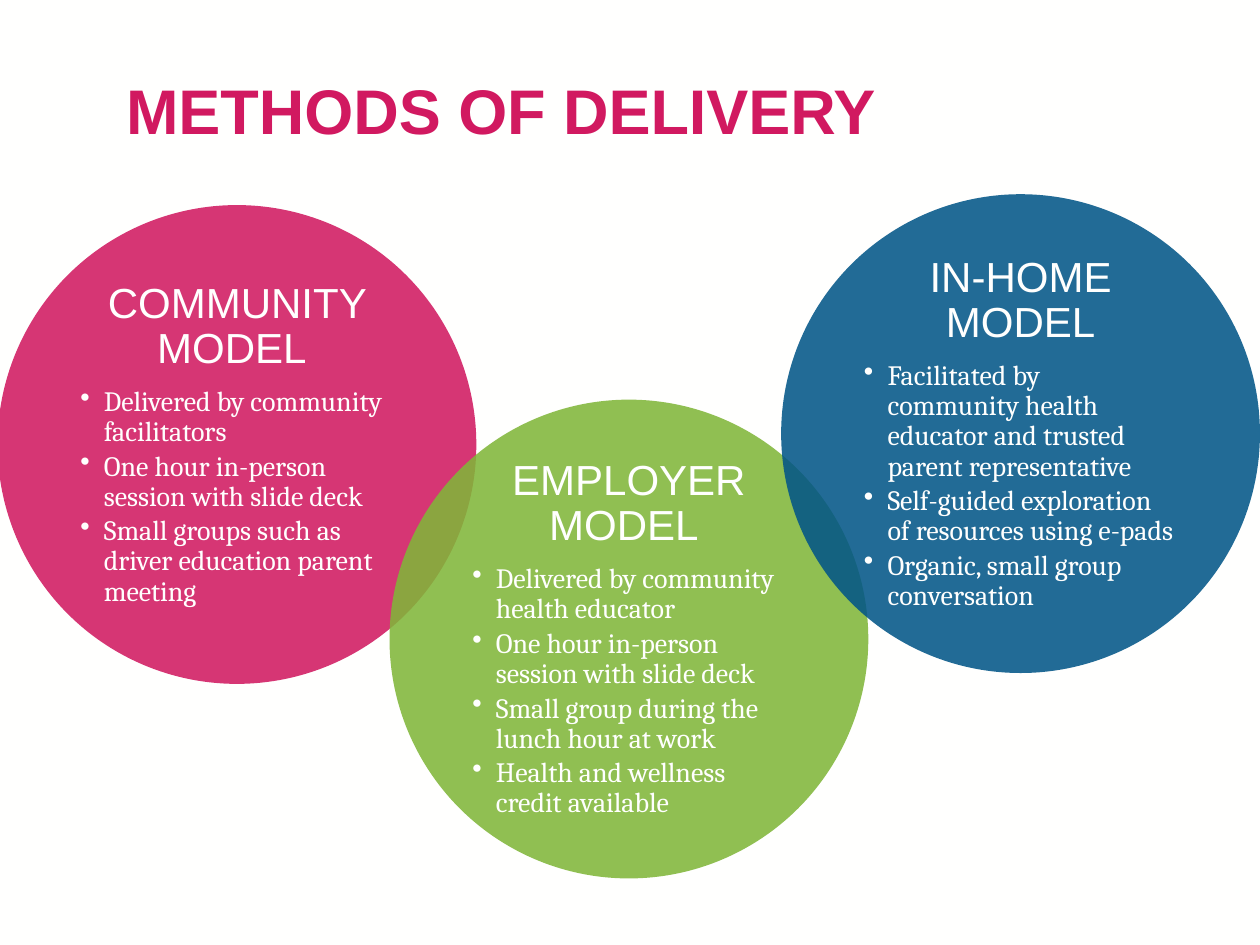
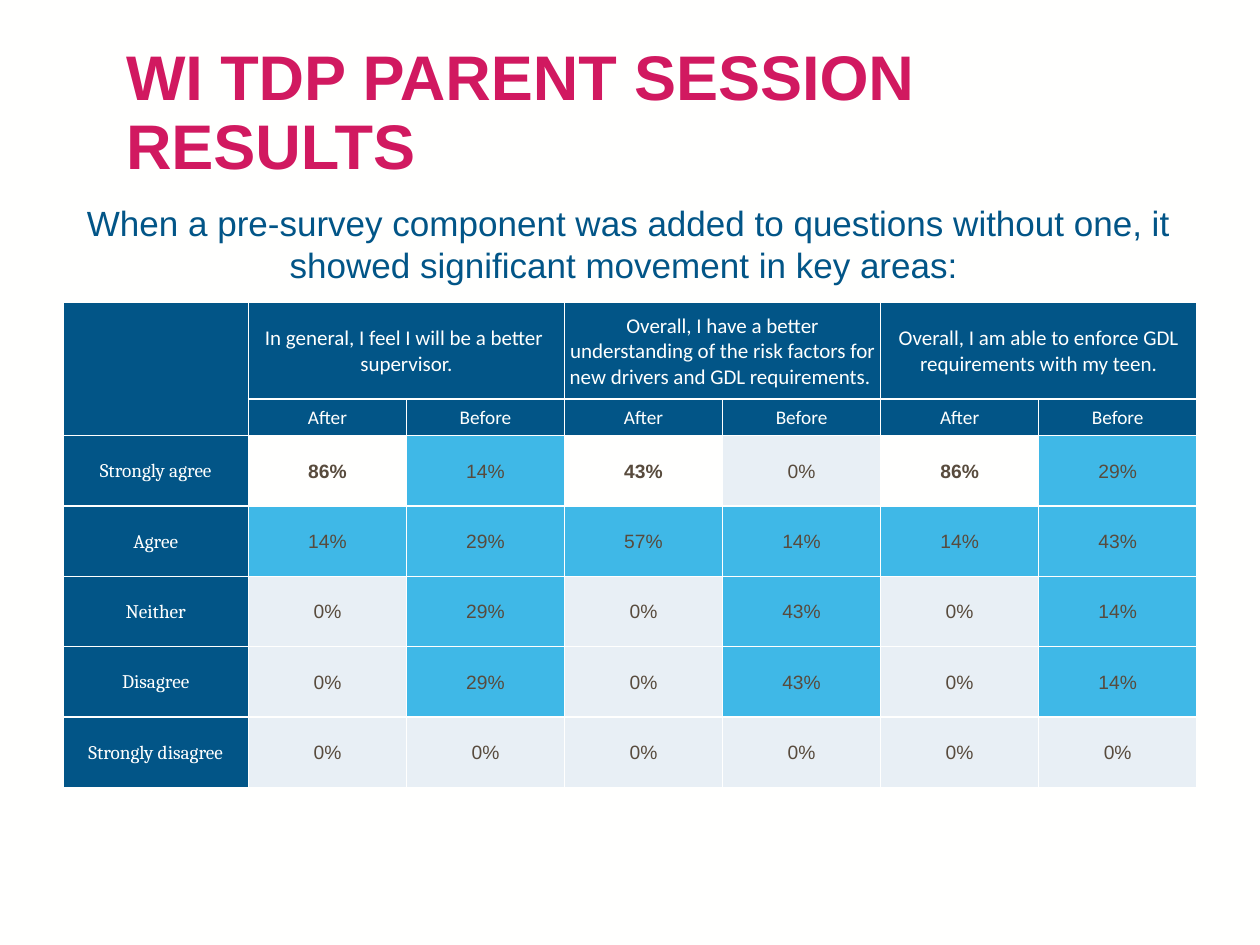
from dataclasses import dataclass

from lxml.etree import SubElement
from pptx import Presentation
from pptx.dml.color import RGBColor
from pptx.enum.shapes import MSO_SHAPE
from pptx.enum.text import MSO_ANCHOR, MSO_AUTO_SIZE, PP_ALIGN
from pptx.oxml import parse_xml
from pptx.oxml.ns import nsdecls, qn
from pptx.util import Pt

HEX = {
    "paper": "FFFFFE",
    "pink": "D11960",
    "green": "80B639",
    "navy": "025587",
    "sky": "3FB8E7",
    "pale": "E8EFF5",
    "brown": "584B3D",
}
DISC, INSET = 273.6, 40.2
TABLE_WIDTH, LABEL_WIDTH = 648, 106
ROWS = [55, 14] + [40.2] * 5


@dataclass
class Model:
    name: str
    color: str
    left: float
    top: float
    points: list[str]


@dataclass
class Answer:
    label: str
    shares: list[int]


MODELS = [
    Model("COMMUNITY MODEL ", "pink", -1.4, 117.2, [
        "Delivered by community facilitators",
        "One hour in-person session with slide deck",
        "Small groups such as driver education parent meeting",
    ]),
    Model("EMPLOYER MODEL ", "green", 222.6, 228.4, [
        "Delivered by community health educator",
        "One hour in-person session with slide deck",
        "Small group during the lunch hour at work",
        "Health and wellness credit available",
    ]),
    Model("IN-HOME MODEL", "navy", 446.4, 111, [
        "Facilitated by community health educator and trusted parent representative",
        "Self-guided exploration of resources using e-pads",
        "Organic, small group conversation",
    ]),
]
TOPICS = [
    "In general, I feel I will be a better \nsupervisor.",
    "Overall, I have a better understanding of the risk factors for "
    "new drivers and GDL requirements. ",
    "Overall, I am able to enforce GDL requirements with my teen.",
]
ANSWERS = [
    Answer("Strongly agree", [86, 14, 43, 0, 86, 29]),
    Answer("Agree", [14, 29, 57, 14, 14, 43]),
    Answer("Neither", [0, 29, 0, 43, 0, 14]),
    Answer("Disagree", [0, 29, 0, 43, 0, 14]),
    Answer("Strongly disagree", [0] * 6),
]


def color(name: str) -> RGBColor:
    return RGBColor.from_string(HEX[name])


def write(frame, text: str, *, size: float, font: str = "Arial", ink: str = "paper",
          bold: bool = False, align=PP_ALIGN.CENTER, line: float = 1.0,
          after: float = 0, bullet: bool = False) -> None:
    """Add one paragraph per line of text, filling an empty first one."""
    for part in text.split("\n"):
        first = frame.paragraphs[0]
        para = frame.add_paragraph() if first.runs else first
        para.alignment, para.line_spacing = align, line
        para.space_before, para.space_after = Pt(0), Pt(after)
        if bullet:
            props = para._p.get_or_add_pPr()
            props.set("marL", str(Pt(13.5)))
            props.set("indent", str(Pt(-13.5)))
            SubElement(props, qn("a:buChar")).set("char", "•")
        run = para.add_run()
        run.text = part
        run.font.name, run.font.size, run.font.bold = font, Pt(size), bold
        run.font.color.rgb = color(ink)


def add_page(deck, title: str):
    page = deck.slides.add_slide(deck.slide_layouts[5])
    head = page.shapes.title
    head.left, head.top, head.width, head.height = Pt(64.8), Pt(25.2), Pt(591), Pt(80.6)
    frame = head.text_frame
    frame.auto_size = MSO_AUTO_SIZE.NONE
    frame.vertical_anchor = MSO_ANCHOR.MIDDLE
    write(frame, title, size=36, ink="pink", bold=True, align=PP_ALIGN.LEFT, line=0.9)
    return page


def add_box(page, left: float, top: float, width: float, height: float):
    frame = page.shapes.add_textbox(Pt(left), Pt(top), Pt(width), Pt(height)).text_frame
    frame.word_wrap = True
    return frame


def draw_model(page, model: Model) -> None:
    disc = page.shapes.add_shape(
        MSO_SHAPE.OVAL, Pt(model.left), Pt(model.top), Pt(DISC), Pt(DISC))
    disc.shadow.inherit = False
    disc.line.fill.background()
    disc.fill.solid()
    disc.fill.fore_color.rgb = color(model.color)
    tint = disc._element.spPr.find(qn("a:solidFill"))[0]
    SubElement(tint, qn("a:alpha")).set("val", "87000")

    side = DISC - 2 * INSET
    frame = add_box(page, model.left + INSET, model.top + INSET, side, side)
    frame.vertical_anchor = MSO_ANCHOR.MIDDLE
    frame.margin_left = frame.margin_right = Pt(7.2)
    frame.margin_top = frame.margin_bottom = Pt(7.2)
    write(frame, model.name, size=24, line=0.9, after=8.4)
    for point in model.points:
        write(frame, point, size=16, font="Cambria", align=PP_ALIGN.LEFT,
              line=0.9, after=2.4, bullet=True)


def fill_cell(cell, text: str, fill: str = "navy", **style) -> None:
    """Set a cell's text, fill, margins and thin borders."""
    cell.vertical_anchor = MSO_ANCHOR.MIDDLE
    cell.margin_left = cell.margin_right = cell.margin_top = Pt(0.75)
    cell.margin_bottom = Pt(0)
    cell.fill.solid()
    cell.fill.fore_color.rgb = color(fill)
    props = cell._tc.get_or_add_tcPr()
    for spot, side in enumerate("LRTB"):
        props.insert(spot, parse_xml(
            f'<a:ln{side} {nsdecls("a")} w="{Pt(1)}"><a:solidFill>'
            f'<a:srgbClr val="{HEX["paper"]}"/></a:solidFill></a:ln{side}>'))
    write(cell.text_frame, text, **style)


def draw_table(page) -> None:
    count = 2 * len(TOPICS)
    table = page.shapes.add_table(
        len(ROWS), count + 1, Pt(36), Pt(173), Pt(TABLE_WIDTH), Pt(sum(ROWS))).table
    for row, height in zip(table.rows, ROWS):
        row.height = Pt(height)
    for col in table.columns:
        col.width = Pt((TABLE_WIDTH - LABEL_WIDTH) / count)
    table.columns[0].width = Pt(LABEL_WIDTH)

    for row in range(2):
        fill_cell(table.cell(row, 0), "", size=11)
    table.cell(0, 0).merge(table.cell(1, 0))
    for spot, topic in enumerate(TOPICS):
        col = 2 * spot + 1
        for step, time in enumerate(["After", "Before"]):
            fill_cell(table.cell(0, col + step), "" if step else topic,
                      size=12, font="Calibri")
            fill_cell(table.cell(1, col + step), time, size=11, font="Calibri")
        table.cell(0, col).merge(table.cell(0, col + 1))

    for row, answer in enumerate(ANSWERS, 2):
        fill_cell(table.cell(row, 0), answer.label, size=11, font="Cambria")
        for col, share in enumerate(answer.shares, 1):
            strong = row == 2 and col % 2 == 1
            fill = "paper" if strong else "sky" if share else "pale"
            fill_cell(table.cell(row, col), f"{share}%", fill,
                      size=11, ink="brown", bold=strong)


def main() -> None:
    deck = Presentation()
    deck.slide_width, deck.slide_height = Pt(720), Pt(540)
    back = deck.slide_master.background.fill
    back.solid()
    back.fore_color.rgb = color("paper")

    page = add_page(deck, "METHODS OF DELIVERY")
    for model in MODELS:
        draw_model(page, model)

    page = add_page(deck, "WI TDP PARENT SESSION RESULTS")
    draw_table(page)
    frame = add_box(page, 36, 111.6, 646.6, 55.4)
    frame.auto_size = MSO_AUTO_SIZE.SHAPE_TO_FIT_TEXT
    write(frame, "When a pre-survey component was added to questions without one, "
          "it showed significant movement in key areas: ", size=20, ink="navy")
    deck.save("out.pptx")


if __name__ == "__main__":
    main()
